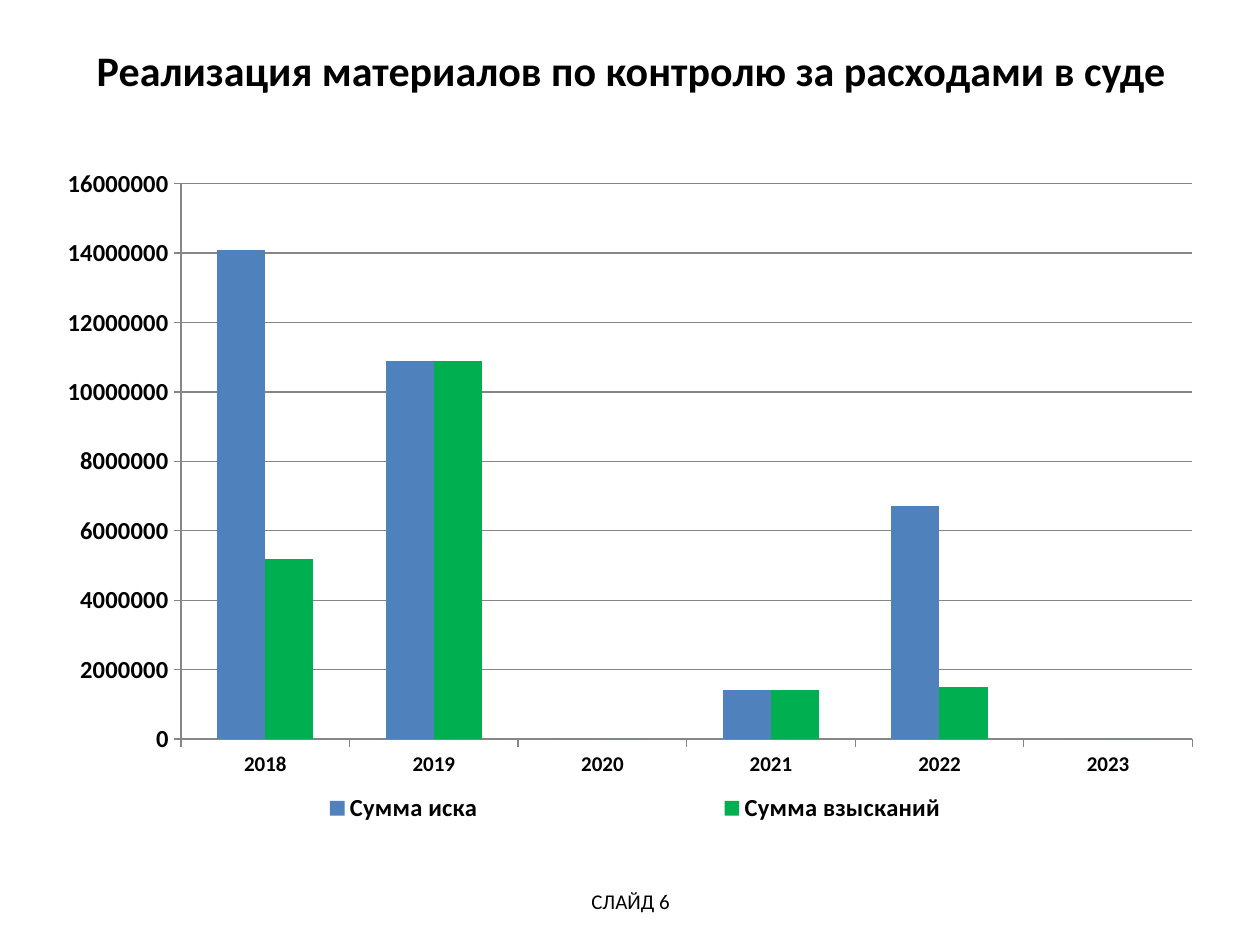
from dataclasses import dataclass

from lxml import etree
from pptx import Presentation
from pptx import util as u
from pptx.chart import data as cd
from pptx.dml import color as col
from pptx.enum import chart as ch
from pptx.enum import text as tx
from pptx.oxml import ns


@dataclass(frozen=True)
class Theme:
    font: str = "Calibri"
    ink: str = "000000"
    grid: str = "868686"
    claim: str = "4F81BD"
    award: str = "00B050"
    title: int = 24
    label: int = 14
    small: int = 12
    base: int = 10


THEME = Theme()
YEARS = ["2018", "2019", "2020", "2021", "2022", "2023"]
SERIES = [
    ("Сумма иска", THEME.claim, [14100000, 10900000, 0, 1400000, 6700000, 0]),
    ("Сумма взысканий", THEME.award, [5200000, 10900000, 0, 1400000, 1500000, 0]),
]


def apply(item, values):
    for name, value in values.items():
        setattr(item, name, value)


def rgb(code):
    return col.RGBColor.from_string(code)


def style(font, size, bold=False):
    apply(font, {"name": THEME.font, "size": u.Pt(size), "bold": bold})
    font.color.rgb = rgb(THEME.ink)


def paint(line):
    line.width = u.Pt(0.75)
    line.color.rgb = rgb(THEME.grid)


def place(parent, index, inner=False, **box):
    for old in parent.findall(ns.qn("c:layout")):
        parent.remove(old)
    layout = etree.Element(ns.qn("c:layout"))
    parent.insert(index, layout)
    manual = etree.SubElement(layout, ns.qn("c:manualLayout"))
    marks = {"layoutTarget": "inner"} if inner else {}
    marks.update(xMode="edge", yMode="edge", **box)
    for name, value in marks.items():
        etree.SubElement(manual, ns.qn(f"c:{name}")).set("val", str(value))


def add_line(slide, box, words, size, bold=False):
    frame = slide.shapes.add_textbox(*map(u.Inches, box)).text_frame
    apply(frame, {"word_wrap": True, "vertical_anchor": tx.MSO_ANCHOR.MIDDLE})
    para = frame.paragraphs[0]
    para.alignment = tx.PP_ALIGN.CENTER
    run = para.add_run()
    run.text = words
    style(run.font, size, bold)


def add_bars(slide, box):
    data = cd.CategoryChartData()
    data.categories = YEARS
    for name, _, values in SERIES:
        data.add_series(name, values)
    kind = ch.XL_CHART_TYPE.COLUMN_CLUSTERED
    chart = slide.shapes.add_chart(kind, *map(u.Inches, box), data).chart
    style(chart.font, THEME.base)
    apply(chart, {"has_title": False, "has_legend": True})

    plot = chart.plots[0]
    apply(plot, {"gap_width": 150, "overlap": 0, "vary_by_categories": False})
    for series, (_, code, _) in zip(plot.series, SERIES):
        series.format.fill.solid()
        series.format.fill.fore_color.rgb = rgb(code)

    years, sums = chart.category_axis, chart.value_axis
    for axis, size in ((years, THEME.small), (sums, THEME.label)):
        apply(axis, {
            "major_tick_mark": ch.XL_TICK_MARK.OUTSIDE,
            "minor_tick_mark": ch.XL_TICK_MARK.NONE,
        })
        paint(axis.format.line)
        style(axis.tick_labels.font, size, True)
    apply(sums, {
        "minimum_scale": 0,
        "maximum_scale": 16000000,
        "major_unit": 2000000,
        "has_major_gridlines": True,
    })
    paint(sums.major_gridlines.format.line)
    apply(sums.tick_labels, {"number_format": "0", "number_format_is_linked": False})

    legend = chart.legend
    apply(legend, {
        "position": ch.XL_LEGEND_POSITION.BOTTOM,
        "include_in_layout": False,
    })
    style(legend.font, THEME.label, True)
    area = chart.element.find(".//" + ns.qn("c:plotArea"))
    place(area, 0, inner=True, x=0.117, y=0.042, w=0.864, h=0.812)
    place(area.getparent().find(ns.qn("c:legend")), 1, x=0.04, y=0.92, w=0.93, h=0.07)


def main():
    deck = Presentation()
    apply(deck, {"slide_width": u.Inches(10), "slide_height": u.Inches(7.5)})
    slide = deck.slides.add_slide(deck.slide_layouts[6])
    heading = "Реализация материалов по контролю за расходами в суде"
    add_line(slide, (0.51, 0.21, 9, 0.69), heading, THEME.title, True)
    add_bars(slide, (0.35, 1.23, 9.29, 5.43))
    add_line(slide, (3.42, 6.95, 3.17, 0.4), "СЛАЙД 6", THEME.small)
    deck.save("out.pptx")


if __name__ == "__main__":
    main()
